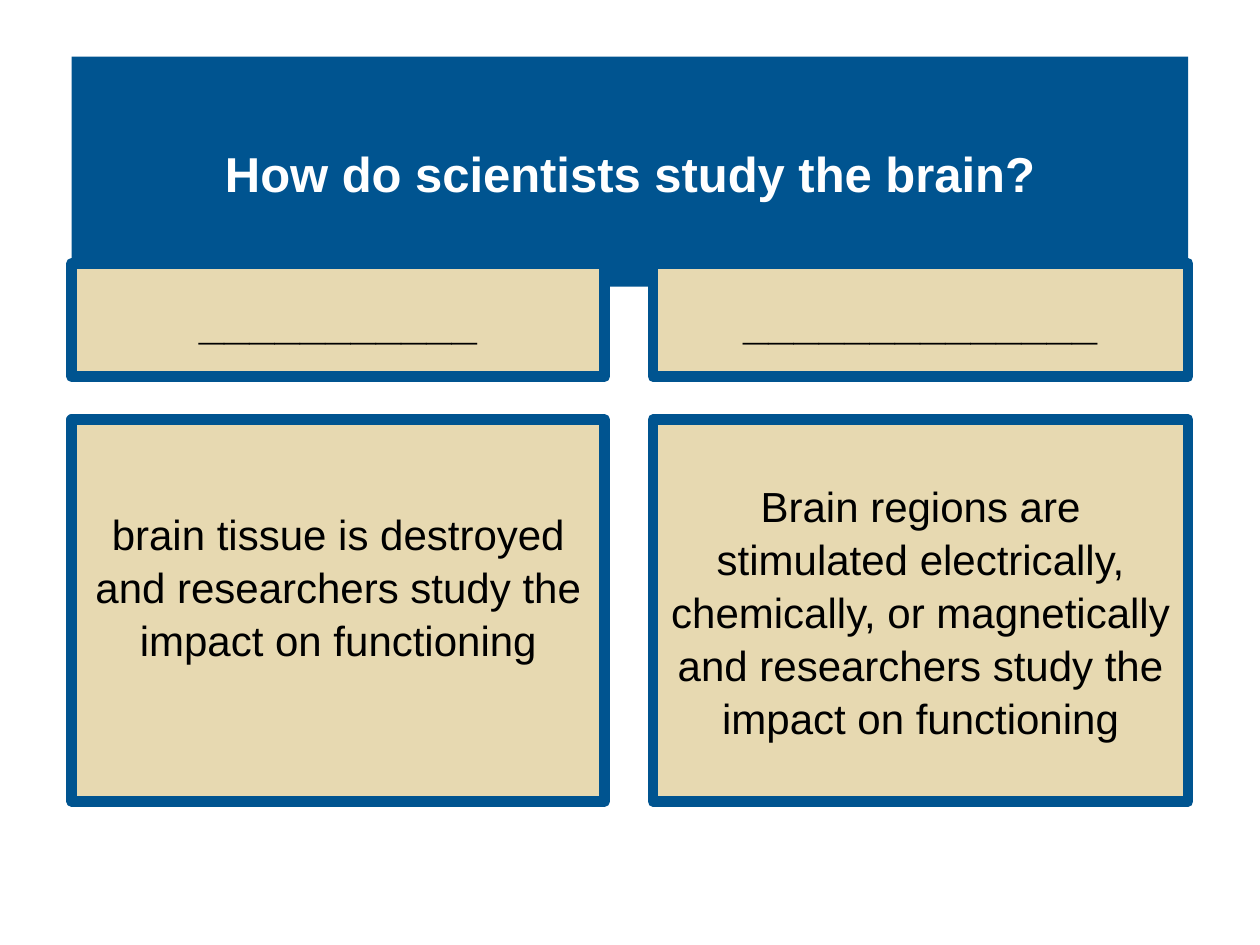
from dataclasses import dataclass

from pptx import Presentation
from pptx.dml.color import RGBColor
from pptx.enum.shapes import MSO_SHAPE
from pptx.enum.text import MSO_ANCHOR, PP_ALIGN
from pptx.util import Pt

RECT = MSO_SHAPE.RECTANGLE
MIDDLE = MSO_ANCHOR.MIDDLE
CENTER = PP_ALIGN.CENTER


@dataclass(frozen=True)
class Theme:
    """Colours, font and type sizes of the slide."""
    blue: RGBColor = RGBColor(0x00, 0x54, 0x90)
    sand: RGBColor = RGBColor(0xE7, 0xD9, 0xB1)
    white: RGBColor = RGBColor(0xFF, 0xFF, 0xFF)
    black: RGBColor = RGBColor(0x00, 0x00, 0x00)
    font: str = "Arial"
    title: float = 28
    blank: float = 26
    body: float = 24
    border: float = 6
    leading: float = 1.05


THEME = Theme()
LEFT = 41
TITLE = (32.4, 638, 131.4)
BLANK = (150.5, 64.8)
BODY = (239.8, 218.2)
COLUMNS = (
    (LEFT, 304.6, "___________",
     "brain tissue is destroyed and researchers study the impact on functioning", 29),
    (373, 306, "______________",
     "Brain regions are stimulated electrically, chemically, or magnetically "
     "and researchers study the impact on functioning", 0),
)


def add_box(slide, box, fill):
    """Add a plain filled rectangle."""
    shape = slide.shapes.add_shape(RECT, *map(Pt, box))
    shape.shadow.inherit = False
    shape.fill.solid()
    shape.fill.fore_color.rgb = fill
    shape.line.fill.background()
    return shape


def set_text(shape, text, size, color, bold=False, lift=0):
    """Write centred text, with extra space below it to lift it."""
    frame = shape.text_frame
    frame.word_wrap = True
    frame.vertical_anchor = MIDDLE
    frame.margin_bottom = Pt(3.6 + lift)
    para = frame.paragraphs[0]
    para.text = text
    para.alignment = CENTER
    para.line_spacing = THEME.leading
    font = para.font
    font.name = THEME.font
    font.size = Pt(size)
    font.bold = bold
    font.color.rgb = color


def add_title(slide, text):
    """Add the title band."""
    top, width, height = TITLE
    band = add_box(slide, (LEFT, top, width, height), THEME.blue)
    set_text(band, text, THEME.title, THEME.white, bold=True)


def add_card(slide, box, text, size, bold=False, lift=0):
    """Add a bordered card with text."""
    card = add_box(slide, box, THEME.sand)
    card.line.color.rgb = THEME.blue
    card.line.width = Pt(THEME.border)
    set_text(card, text, size, THEME.black, bold, lift)


def add_column(slide, left, width, blank, body, lift):
    """Add a blank to fill in above its description."""
    top, height = BLANK
    add_card(slide, (left, top, width, height), blank, THEME.blank, bold=True)
    top, height = BODY
    add_card(slide, (left, top, width, height), body, THEME.body, lift=lift)


def main():
    """Build and save the slide."""
    deck = Presentation()
    deck.slide_width, deck.slide_height = Pt(720), Pt(540)
    slide = deck.slides.add_slide(deck.slide_layouts[6])
    add_title(slide, "How do scientists study the brain?")
    for column in COLUMNS:
        add_column(slide, *column)
    deck.save("out.pptx")


if __name__ == "__main__":
    main()
